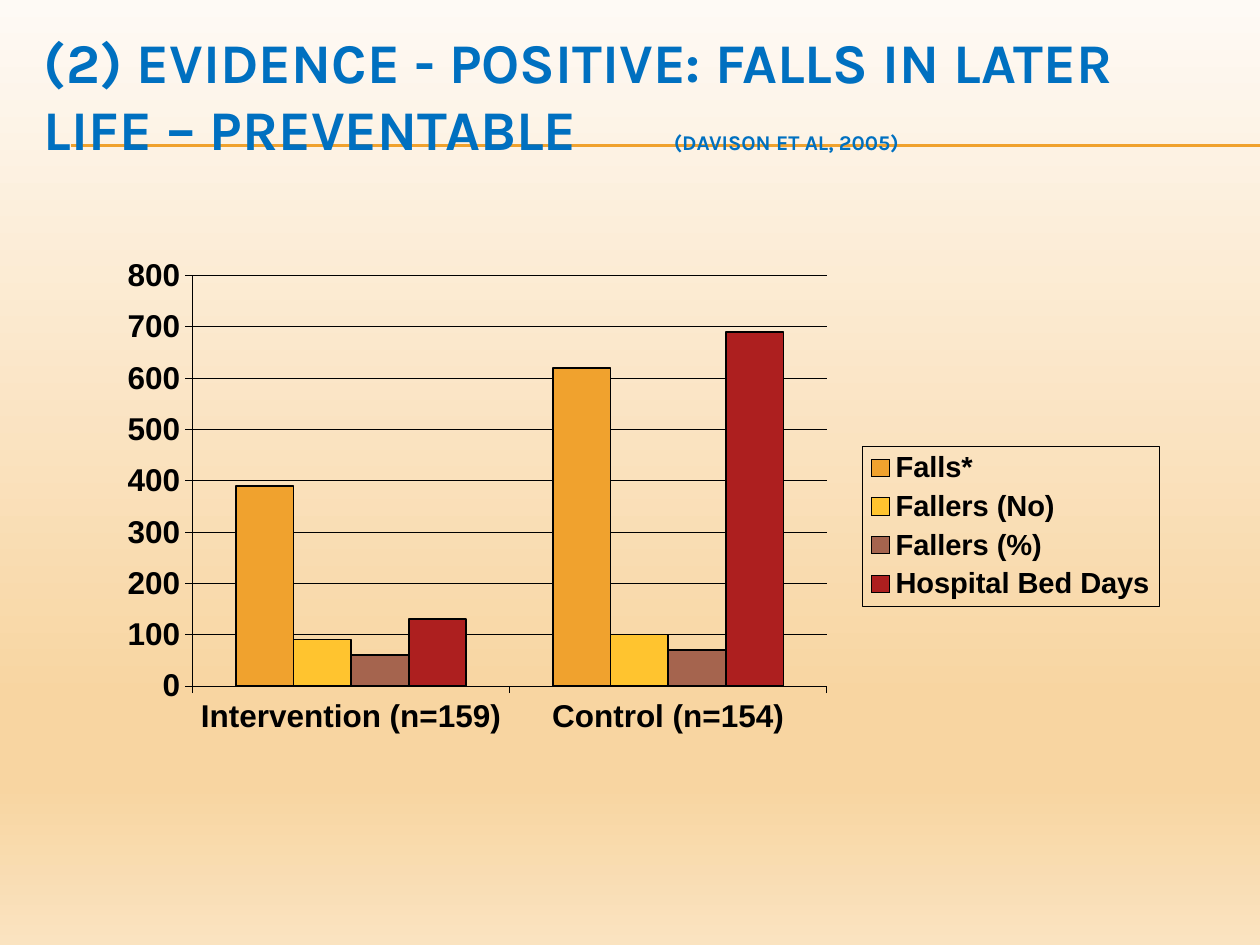
from copy import deepcopy
from lxml import etree
from pptx import Presentation
from pptx.chart.data import CategoryChartData
from pptx.dml.color import RGBColor
from pptx.enum.chart import XL_CHART_TYPE, XL_LEGEND_POSITION, XL_TICK_LABEL_POSITION, XL_TICK_MARK
from pptx.enum.shapes import MSO_CONNECTOR
from pptx.enum.text import MSO_ANCHOR
from pptx.oxml.ns import qn
from pptx.util import Inches, Pt

HUES = {"title": "0070C0", "ink": "000000", "rule": "F0A22E"}
FADE = [(0, "FEFAF5"), (0.74, "F8D5A1"), (0.83, "F8D5A1"), (1, "FAE3C0")]
ROWS = [
    ("Falls*", (390, 620), "F0A22E"),
    ("Fallers (No)", (90, 100), "FFC42F"),
    ("Fallers (%)", (60, 70), "A5644E"),
    ("Hospital Bed Days", (130, 690), "AD1F1F"),
]


def set_font(font, face, size, hue):
    font.name = face
    font.size = Pt(size)
    font.bold = True
    font.color.rgb = RGBColor.from_string(HUES[hue])


def set_line(line, hue, width):
    line.color.rgb = RGBColor.from_string(HUES[hue])
    line.width = Pt(width)


deck = Presentation()
deck.slide_width, deck.slide_height = Inches(10), Inches(7.5)
slide = deck.slides.add_slide(deck.slide_layouts[6])

fill = slide.background.fill
fill.gradient()
fill.gradient_angle = 270
stops = slide.element.find(".//" + qn("a:gsLst"))
for _ in range(len(FADE) - len(stops)):
    stops.append(deepcopy(stops[0]))
for stop, (place, hue) in zip(fill.gradient_stops, FADE):
    stop.position = place
    stop.color.rgb = RGBColor.from_string(hue)

for y in (1.15, 1.16):
    rule = slide.shapes.add_connector(
        MSO_CONNECTOR.STRAIGHT, Inches(0.56), Inches(y), Inches(10), Inches(y))
    set_line(rule.line, "rule", 0.75)
    etree.SubElement(rule.element.spPr, qn("a:effectLst"))

title = slide.shapes.add_textbox(Inches(0.25), Inches(0.29), Inches(9.5), Inches(0.92))
frame = title.text_frame
frame.word_wrap = True
frame.vertical_anchor = MSO_ANCHOR.MIDDLE
for text, size in [
    ("(2) EVIDENCE - POSITIVE: FALLS IN LATER LIFE – PREVENTABLE \t\t", 32),
    ("(DAVISON ET AL, 2005)", 12),
]:
    run = frame.paragraphs[0].add_run()
    run.text = text
    set_font(run.font, "Karla", size, "title")

data = CategoryChartData()
data.categories = ["Intervention (n=159)", "Control (n=154)"]
for name, vals, _ in ROWS:
    data.add_series(name, vals)
chart = slide.shapes.add_chart(
    XL_CHART_TYPE.COLUMN_CLUSTERED,
    Inches(0.89), Inches(1.98), Inches(8.39), Inches(4.39), data).chart
chart.has_title = False
set_font(chart.font, "Arial", 18, "ink")

plot = chart.plots[0]
plot.gap_width = 150
plot.overlap = 0
plot.vary_by_categories = False
for bars, (_, _, hue) in zip(plot.series, ROWS):
    bars.format.fill.solid()
    bars.format.fill.fore_color.rgb = RGBColor.from_string(hue)
    set_line(bars.format.line, "ink", 1)

for axis in (chart.category_axis, chart.value_axis):
    axis.major_tick_mark = XL_TICK_MARK.OUTSIDE
    axis.minor_tick_mark = XL_TICK_MARK.NONE
    set_font(axis.tick_labels.font, "Arial", 18, "ink")
    set_line(axis.format.line, "ink", 0.25)
chart.category_axis.tick_label_position = XL_TICK_LABEL_POSITION.LOW
scale = chart.value_axis
scale.minimum_scale, scale.maximum_scale, scale.major_unit = 0, 800, 100
set_line(scale.major_gridlines.format.line, "ink", 0.25)

chart.has_legend = True
legend = chart.legend
legend.position = XL_LEGEND_POSITION.RIGHT
legend.include_in_layout = False
set_font(legend.font, "Arial", 16.6, "ink")
frame = etree.Element(qn("c:spPr"))
edge = etree.SubElement(frame, qn("a:ln"), w=str(Pt(0.25)))
paint = etree.SubElement(edge, qn("a:solidFill"))
etree.SubElement(paint, qn("a:srgbClr"), val=HUES["ink"])
legend._element.find(qn("c:txPr")).addprevious(frame)

area = chart._chartSpace.find(".//" + qn("c:plotArea"))
for old in area.findall(qn("c:layout")):
    area.remove(old)
layout = etree.Element(qn("c:layout"))
area.insert(0, layout)
manual = etree.SubElement(layout, qn("c:manualLayout"))
for tag, val in [
    ("layoutTarget", "inner"), ("xMode", "edge"), ("yMode", "edge"),
    ("x", 0.076), ("y", 0.047), ("w", 0.6), ("h", 0.742),
]:
    etree.SubElement(manual, qn("c:" + tag), val=str(val))

deck.save("out.pptx")
